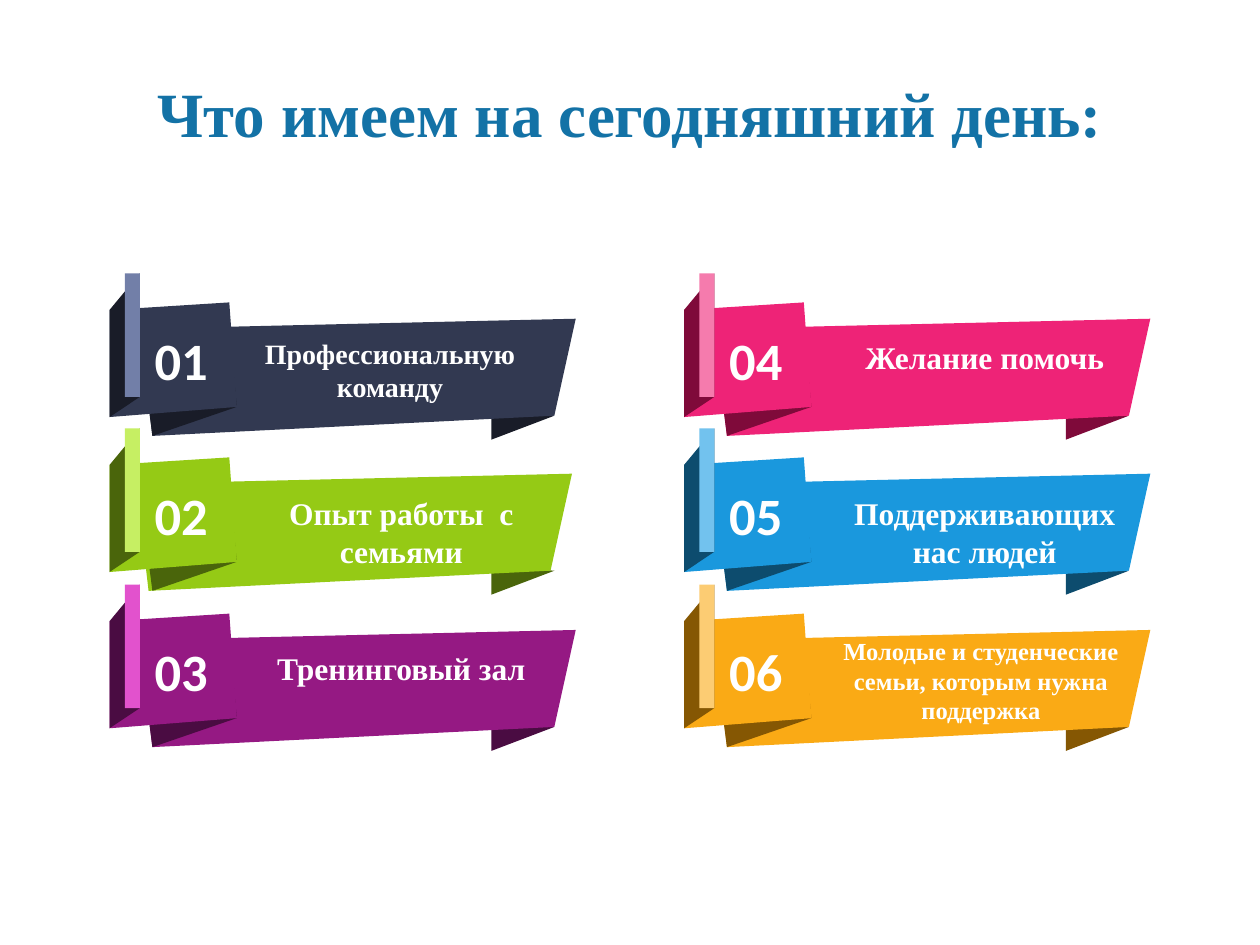
from pptx import Presentation
from pptx import util as u
from pptx.dml.color import RGBColor
from pptx.enum import shapes, text


def paint(shape, color):
    shape.shadow.inherit = False
    shape.fill.solid()
    shape.fill.fore_color.rgb = RGBColor.from_string(color)
    shape.line.fill.background()


def write(shape, wording, size, font, color, align, anchor, insets):
    frame = shape.text_frame
    frame.word_wrap = True
    frame.vertical_anchor = anchor
    frame.margin_left, frame.margin_top, frame.margin_right, frame.margin_bottom = (
        u.Inches(inset) for inset in insets)
    frame.text = wording
    paragraph = frame.paragraphs[0]
    paragraph.alignment = align
    for run in paragraph.runs:
        run.font.size = u.Pt(size)
        run.font.name = font
        run.font.bold = True
        run.font.color.rgb = RGBColor.from_string(color)


presentation = Presentation()
presentation.slide_width = u.Inches(10)
presentation.slide_height = u.Inches(7.5)
slide = presentation.slides.add_slide(presentation.slide_layouts[6])

SERIF = "Times New Roman"
WHITE = "FFFFFF"
LEFTS = (0.87, 5.43)
TOPS = (2.17, 3.4, 4.64)

# Outlines of one ribbon, measured from its top left corner, back to front
OUTLINES = {
    "end fold": [(3.53, 1.13), (3.03, 1.32), (3.03, 1.09)],
    "banner": [(3.53, 1.13), (0.34, 1.29), (0.24, 0.44), (3.7, 0.36)],
    "under fold": [(0.34, 1.29), (1.01, 1.06), (0.95, 0.43), (0.28, 0.83)],
    "tab": [(1.01, 1.06), (0.95, 0.23), (0, 0.29), (0, 1.14)],
    "side fold": [(0, 0.29), (0.24, 0), (0.24, 0.98), (0, 1.14)],
}

# Main, dark and light colour; banner shift; label, size and box
RIBBONS = [
    ("323951", "191C28", "727FA8", 0, "Профессиональную команду", 16, (1.87, 2.52, 2.45, 0.69)),
    ("95CA15", "4A650B", "C6EF63", -0.03, "Опыт работы  с семьями", 18, (1.96, 3.77, 2.45, 0.76)),
    ("951983", "4A0C42", "E252CD", 0, "Тренинговый зал", 18, (1.96, 5, 2.45, 0.45)),
    ("EE2377", "7F0A3A", "F57BAD", 0, "Желание помочь", 18, (6.59, 2.53, 2.45, 0.45)),
    ("1A98DD", "0D4C6E", "72C2EE", 0, "Поддерживающих нас людей", 18, (6.59, 3.77, 2.45, 0.76)),
    ("FAAA15", "855703", "FCCC73", 0, "Молодые и студенческие семьи, которым нужна поддержка", 14,
     (6.56, 4.9, 2.45, 0.86)),
]

# Title
title = slide.shapes.add_textbox(u.Inches(0.69), u.Inches(0.31), u.Inches(8.62), u.Inches(1.24))
write(title, "Что имеем на сегодняшний день:", 36, SERIF, "1372A6",
      text.PP_ALIGN.CENTER, text.MSO_ANCHOR.MIDDLE, (0.1, 0.05, 0.1, 0.05))
title.text_frame.paragraphs[0].line_spacing = 0.9

# Ribbons, down the left column and then the right
for index, (main, dark, light, shift, label, size, box) in enumerate(RIBBONS):
    column, row = divmod(index, len(TOPS))
    left, top = LEFTS[column], TOPS[row]

    # Folded paper
    for part, outline in OUTLINES.items():
        offset = shift if part == "banner" else 0
        points = [(u.Inches(left + x + offset), u.Inches(top + y)) for x, y in outline]
        builder = slide.shapes.build_freeform(*points[0])
        builder.add_line_segments(points[1:], close=True)
        shape = builder.convert_to_shape()
        paint(shape, dark if "fold" in part else main)
        if part == "tab":
            write(shape, f"{index + 1:02}", 30, "Calibri", WHITE,
                  text.PP_ALIGN.RIGHT, text.MSO_ANCHOR.MIDDLE, (0.07, 0.04, 0.23, 0.04))

    # Light bar
    bar = slide.shapes.add_shape(shapes.MSO_SHAPE.RECTANGLE, u.Inches(left + 0.12),
                                 u.Inches(top), u.Inches(0.12), u.Inches(0.98))
    paint(bar, light)

    # Label
    caption = slide.shapes.add_textbox(*(u.Inches(length) for length in box))
    write(caption, label, size, SERIF, WHITE,
          text.PP_ALIGN.CENTER, text.MSO_ANCHOR.TOP, (0.1, 0.15, 0.1, 0))
    caption.text_frame.auto_size = text.MSO_AUTO_SIZE.SHAPE_TO_FIT_TEXT

presentation.save("out.pptx")
